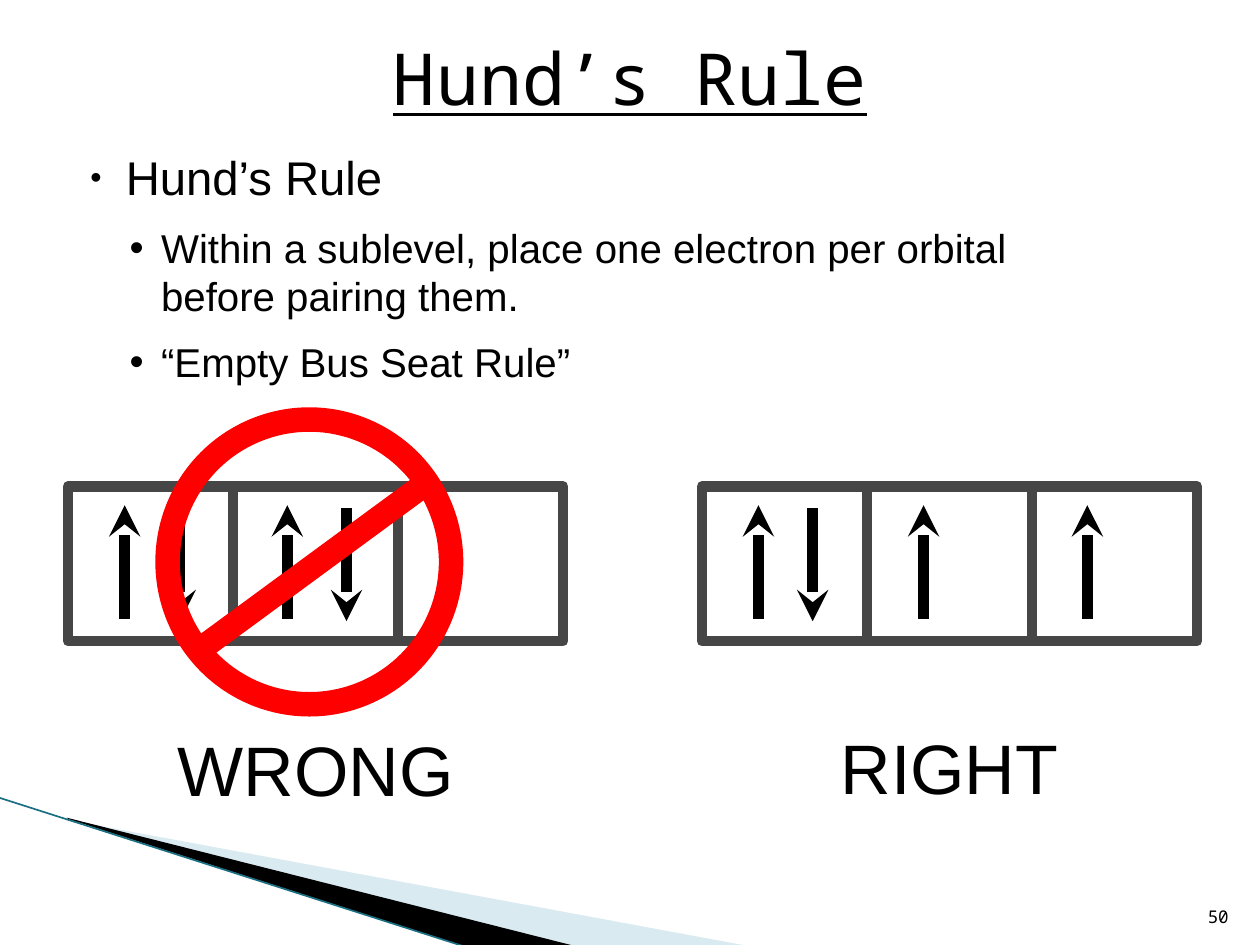
from lxml import etree
from pptx import Presentation, util as u
from pptx.dml.color import RGBColor
from pptx.enum import shapes, text
from pptx.oxml.ns import qn

W, H = 10, 7.5
BLACK, GREY, RED, TEAL, PALE = "000000", "464646", "FF0000", "1B6F82", "A0CBDC"
SANS, MONO = "Arial", "Noto Sans Mono"

WEDGES = [
    ([(0.55, 6.51), (5.95, 7.51), (4.56, 7.51), (0.55, 6.5)], PALE, 40),
    ([(0.53, 6.49), (4.57, 7.51), (3.72, 7.52), (0.54, 6.5)], BLACK, 100),
]
BOX_TOP, BOX_W, BOX_H, BOXES = 3.86, 1.31, 1.23, 3
DIAGRAMS = [
    {"left": 5.57, "up": [6.02, 7.33, 8.63], "down": [6.45]},
    {"left": 0.54, "up": [0.99, 2.28], "down": [1.43, 2.75]},
]
UP, DOWN = (4.91, 4.01), (4.03, 4.93)
LABELS = [("RIGHT", (6.15, 5.5, 2.77, 0.89)), ("WRONG", (0.95, 5.52, 3.11, 0.89))]
BODY = [
    ("Hund’s Rule", 0, 27, 0.4, -0.28, 68),
    ("Within a sublevel, place one electron per orbital before pairing them.", 1, 23, 0.68, -0.25, 100),
    ("“Empty Bus Seat Rule”", 1, 23, 0.68, -0.25, 100),
]


def rgb(c):
    return RGBColor.from_string(c)


def put(obj, **values):
    for name, value in values.items():
        setattr(obj, name, value)


def inches(*values):
    return [u.Inches(v) for v in values]


def stroke(sp, color, width):
    sp.line.color.rgb = rgb(color)
    sp.line.width = u.Pt(width)


def line(parent, x1, y1, x2, y2, color, width, arrow=False):
    c = parent.add_connector(shapes.MSO_CONNECTOR.STRAIGHT, *inches(x1, y1, x2, y2))
    stroke(c, color, width)
    if arrow:
        etree.SubElement(c.line._get_or_add_ln(), qn("a:tailEnd"), type="stealth")
    etree.SubElement(c._element.spPr, qn("a:effectLst"))


def outline(parent, kind, box, color, width):
    sp = parent.add_shape(kind, *inches(*box))
    sp.shadow.inherit = False
    sp.fill.background()
    stroke(sp, color, width)


def wedge(s, points, color, alpha):
    fb = s.shapes.build_freeform(*inches(*points[0]), scale=1.0)
    fb.add_line_segments([inches(*pt) for pt in points[1:]])
    sp = fb.convert_to_shape()
    sp.shadow.inherit = False
    sp.fill.solid()
    sp.fill.fore_color.rgb = rgb(color)
    sp.line.fill.background()
    if alpha < 100:
        clr = sp._element.spPr.find(qn("a:solidFill"))[0]
        etree.SubElement(clr, qn("a:alpha"), val=str(alpha * 1000))


def textbox(s, box, **frame):
    tf = s.shapes.add_textbox(*inches(*box)).text_frame
    put(tf, word_wrap=True, **frame)
    return tf


def write(p, words, font, size, **para):
    put(p, **para)
    r = p.add_run()
    r.text = words
    put(r.font, name=font, size=u.Pt(size))
    r.font.color.rgb = rgb(BLACK)
    return r


def bullet(p, left, hang, share):
    pPr = p._p.get_or_add_pPr()
    put_attrs = {"marL": left, "indent": hang}
    for name, value in put_attrs.items():
        pPr.set(name, str(u.Inches(value)))
    etree.SubElement(pPr, qn("a:buSzPct"), val=str(share * 1000))
    etree.SubElement(pPr, qn("a:buFont"), typeface=SANS)
    etree.SubElement(pPr, qn("a:buChar"), char="•")


def main():
    prs = Presentation()
    put(prs, slide_width=u.Inches(W), slide_height=u.Inches(H))
    s = prs.slides.add_slide(prs.slide_layouts[6])
    center, right = text.PP_ALIGN.CENTER, text.PP_ALIGN.RIGHT

    for points, color, alpha in WEDGES:
        wedge(s, points, color, alpha)
    line(s.shapes, -0.01, 6.33, 3.71, 7.52, TEAL, 0.95)

    for d in DIAGRAMS:
        for key, (y1, y2) in (("up", UP), ("down", DOWN)):
            for x in d[key]:
                line(s.shapes, x, y1, x, y2, BLACK, 6, arrow=True)

    for words, box in LABELS:
        p = textbox(s, box).paragraphs[0]
        write(p, words, SANS, 40, alignment=center, line_spacing=1.3)

    tf = textbox(s, (0.5, 1.08, 8.3, 2.42), margin_top=u.Inches(0.1))
    for i, (words, level, size, left, hang, share) in enumerate(BODY):
        p = tf.add_paragraph() if i else tf.paragraphs[0]
        p.level = level
        if i:
            p.space_before = u.Pt(10)
        bullet(p, left, hang, share)
        write(p, words, SANS, size)

    tf = textbox(s, (0.5, 0.17, 9, 0.88), vertical_anchor=text.MSO_ANCHOR.MIDDLE)
    write(tf.paragraphs[0], "Hund’s Rule", MONO, 41, alignment=center).font.underline = True

    for d in DIAGRAMS:
        group = s.shapes.add_group_shape().shapes
        for i in range(BOXES):
            box = (d["left"] + i * BOX_W, BOX_TOP, BOX_W, BOX_H)
            outline(group, shapes.MSO_SHAPE.RECTANGLE, box, GREY, 6)

    ban = s.shapes.add_group_shape().shapes
    outline(ban, shapes.MSO_SHAPE.OVAL, (1.33, 3.33, 2.25, 2.26), RED, 14)
    line(ban, 1.58, 5.16, 3.39, 3.83, RED, 14)

    tf = textbox(s, (9.33, 7.01, 0.52, 0.4), vertical_anchor=text.MSO_ANCHOR.BOTTOM)
    write(tf.paragraphs[0], "50", MONO, 10, alignment=right)

    prs.save("out.pptx")


if __name__ == "__main__":
    main()
